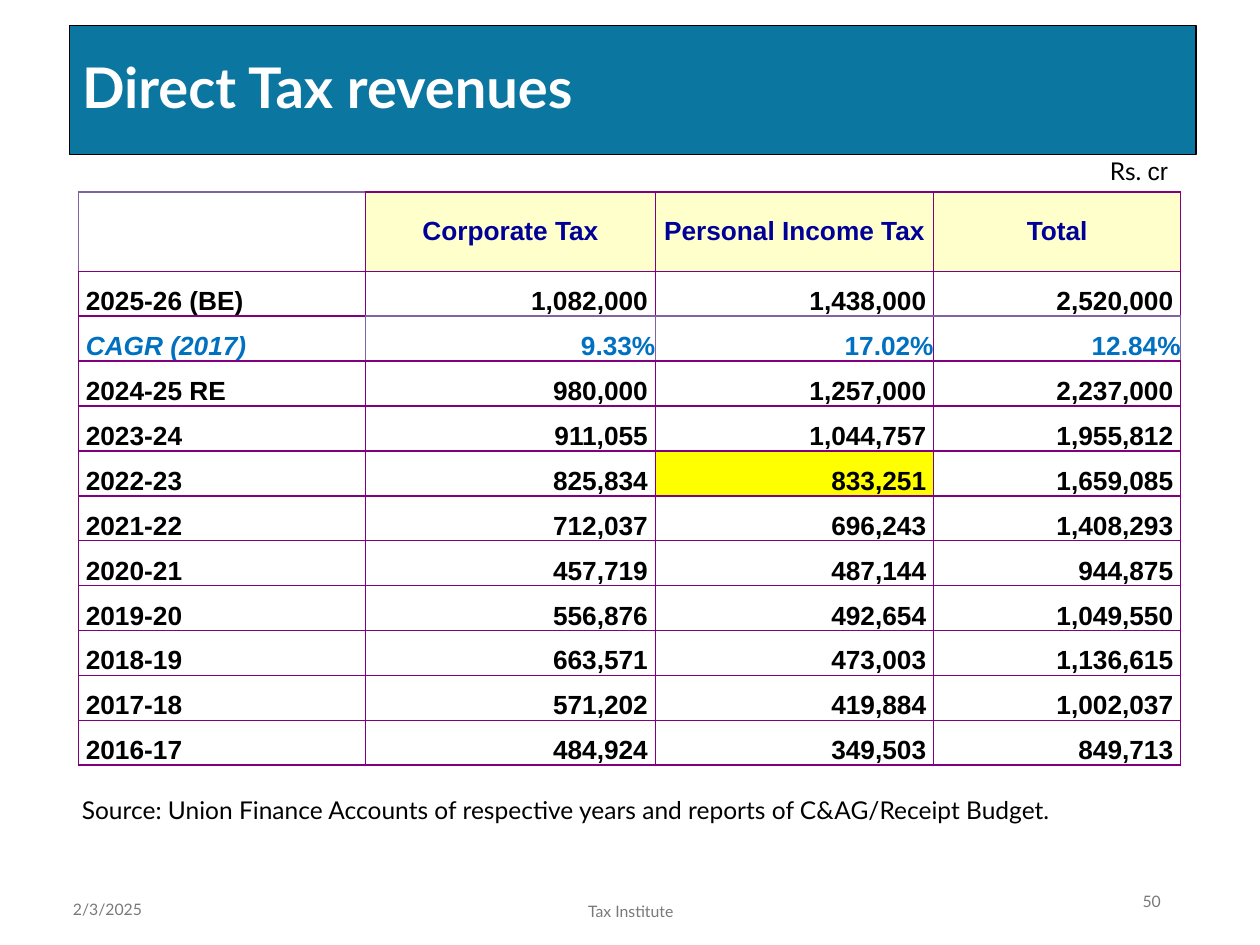
from lxml import etree
from pptx import Presentation
from pptx.dml.color import RGBColor
from pptx.enum.text import MSO_ANCHOR, MSO_AUTO_SIZE, PP_ALIGN
from pptx.oxml.ns import qn
from pptx.util import Cm, Pt

LEFT, CENTER, RIGHT = PP_ALIGN.LEFT, PP_ALIGN.CENTER, PP_ALIGN.RIGHT
TOP, MIDDLE, BOTTOM = MSO_ANCHOR.TOP, MSO_ANCHOR.MIDDLE, MSO_ANCHOR.BOTTOM
NO_AUTOFIT = MSO_AUTO_SIZE.NONE

COLORS = {
    "banner": "0B76A0", "white": "FFFFFF", "black": "000000", "footer": "797979",
    "header_fill": "FFFFCC", "header_text": "000099", "growth": "0070C0",
    "highlight": "FFFF00", "grid": "800080", "soft_grid": "8064A2",
}

HEADINGS = ["", "Corporate Tax", "Personal Income Tax", "Total"]
REVENUES = [
    ["2025-26 (BE)", "1,082,000", "1,438,000", "2,520,000"],
    ["CAGR (2017)", "9.33%", "17.02%", "12.84%"],
    ["2024-25 RE", "980,000", "1,257,000", "2,237,000"],
    ["2023-24", "911,055", "1,044,757", "1,955,812"],
    ["2022-23", "825,834", "833,251", "1,659,085"],
    ["2021-22", "712,037", "696,243", "1,408,293"],
    ["2020-21", "457,719", "487,144", "944,875"],
    ["2019-20", "556,876", "492,654", "1,049,550"],
    ["2018-19", "663,571", "473,003", "1,136,615"],
    ["2017-18", "571,202", "419,884", "1,002,037"],
    ["2016-17", "484,924", "349,503", "849,713"],
]
GROWTH_ROW = 2
HIGHLIGHT_CELL = (5, 2)
# Cell sides drawn in the softer purple: (row, column) -> sides
SOFT_SIDES = {
    (0, 0): "LT", (1, 1): "B", (1, 2): "B", (1, 3): "B",
    (2, 0): "R", (2, 1): "LTR", (2, 2): "LT", (2, 3): "TR",
}


def rgb(name):
    return RGBColor.from_string(COLORS[name])


class RevenueSlide:
    body_font, table_font = "Lato", "Arial"
    table_size, cell_indent = 15, 0.15

    def __init__(self, prs):
        self.slide = prs.slides.add_slide(prs.slide_layouts[5])

    def style(self, font, face, size, color, bold=False, italic=False):
        font.name, font.size = face, Pt(size)
        font.bold, font.italic = bold, italic
        font.color.rgb = rgb(color)

    def title(self, text, left, top, width, height):
        banner = self.slide.shapes.title
        banner.left, banner.top = Cm(left), Cm(top)
        banner.width, banner.height = Cm(width), Cm(height)
        banner.fill.solid()
        banner.fill.fore_color.rgb = rgb("banner")
        banner.line.color.rgb = rgb("black")
        banner.line.width = Pt(0.75)
        frame = banner.text_frame
        frame.text = text
        frame.auto_size = NO_AUTOFIT
        frame.vertical_anchor = MIDDLE
        heading = frame.paragraphs[0]
        heading.alignment, heading.line_spacing = LEFT, 0.9
        self.style(heading.font, self.body_font, 32, "white", bold=True)

    def text(self, text, box, size, color, align=LEFT, anchor=TOP):
        frame = self.slide.shapes.add_textbox(*map(Cm, box)).text_frame
        frame.word_wrap = True
        frame.vertical_anchor = anchor
        paragraph = frame.paragraphs[0]
        paragraph.alignment = align
        paragraph.add_run().text = text
        self.style(paragraph.font, self.body_font, size, color)
        return paragraph

    def borders(self, cell, soft_sides):
        properties = cell._tc.get_or_add_tcPr()
        for position, side in enumerate("LRTB"):
            line = etree.Element(qn(f"a:ln{side}"), w=str(Pt(1)))
            fill = etree.SubElement(line, qn("a:solidFill"))
            color = "soft_grid" if side in soft_sides else "grid"
            etree.SubElement(fill, qn("a:srgbClr"), val=COLORS[color])
            properties.insert(position, line)

    def cell(self, cell, text, row, column):
        is_header, is_growth = row == 0, row == GROWTH_ROW
        cell.margin_left = cell.margin_right = 0
        cell.margin_top = cell.margin_bottom = 0
        cell.vertical_anchor = MIDDLE if is_header else BOTTOM
        entry = cell.text_frame.paragraphs[0]
        entry.text = text
        if is_header:
            entry.alignment = CENTER
        elif column == 0:
            entry.alignment = LEFT
            cell.margin_left = Cm(self.cell_indent)
        else:
            entry.alignment = RIGHT
            cell.margin_right = 0 if is_growth else Cm(self.cell_indent)
        color = "header_text" if is_header else "growth" if is_growth else "black"
        self.style(entry.font, self.table_font, self.table_size, color,
                   bold=True, italic=is_growth and column == 0)

        if is_header and text:
            fill = "header_fill"
        else:
            fill = "highlight" if (row, column) == HIGHLIGHT_CELL else None
        if fill:
            cell.fill.solid()
            cell.fill.fore_color.rgb = rgb(fill)
        else:
            cell.fill.background()
        self.borders(cell, SOFT_SIDES.get((row, column), ""))

    def table(self, rows, left, top, widths, height, header_height):
        table = self.slide.shapes.add_table(
            len(rows), len(widths), Cm(left), Cm(top), Cm(sum(widths)), Cm(height)).table
        table.first_row = table.horz_banding = False
        for column, width in zip(table.columns, widths):
            column.width = Cm(width)
        year_height = (height - header_height) / (len(rows) - 1)
        for r, values in enumerate(rows):
            table.rows[r].height = Cm(year_height if r else header_height)
            for c, value in enumerate(values):
                self.cell(table.cell(r, c), value, r, c)


def main():
    prs = Presentation()
    prs.slide_width, prs.slide_height = Cm(25.4), Cm(19.05)
    page = RevenueSlide(prs)

    page.title("Direct Tax revenues", 1.4, 0.52, 22.71, 2.6)

    # Footer line
    page.text("2/3/2025", (1.22, 17.81, 5.92, 1.02), 9, "footer", anchor=MIDDLE)
    page.text("Tax Institute", (8.69, 17.85, 8.05, 1.02), 9, "footer", CENTER, MIDDLE)
    page.text("50", (17.93, 17.66, 5.72, 1.02), 9, "footer", RIGHT, MIDDLE)

    # Unit and source around the table
    unit = page.text("Rs. ", (18.52, 3.02, 5.28, 0.86), 14, "black", RIGHT)
    crore = unit.add_run()
    crore.text, crore.font.name = "cr", page.table_font
    page.text("Source: Union Finance Accounts of respective years and reports "
              "of C&AG/Receipt Budget.", (1.4, 15.9, 22.05, 0.86), 14, "black")

    # Revenue by year
    page.table([HEADINGS] + REVENUES, 1.58, 3.87, [5.79, 5.84, 5.61, 4.98], 11.56, 1.6)

    prs.save("out.pptx")


if __name__ == "__main__":
    main()
